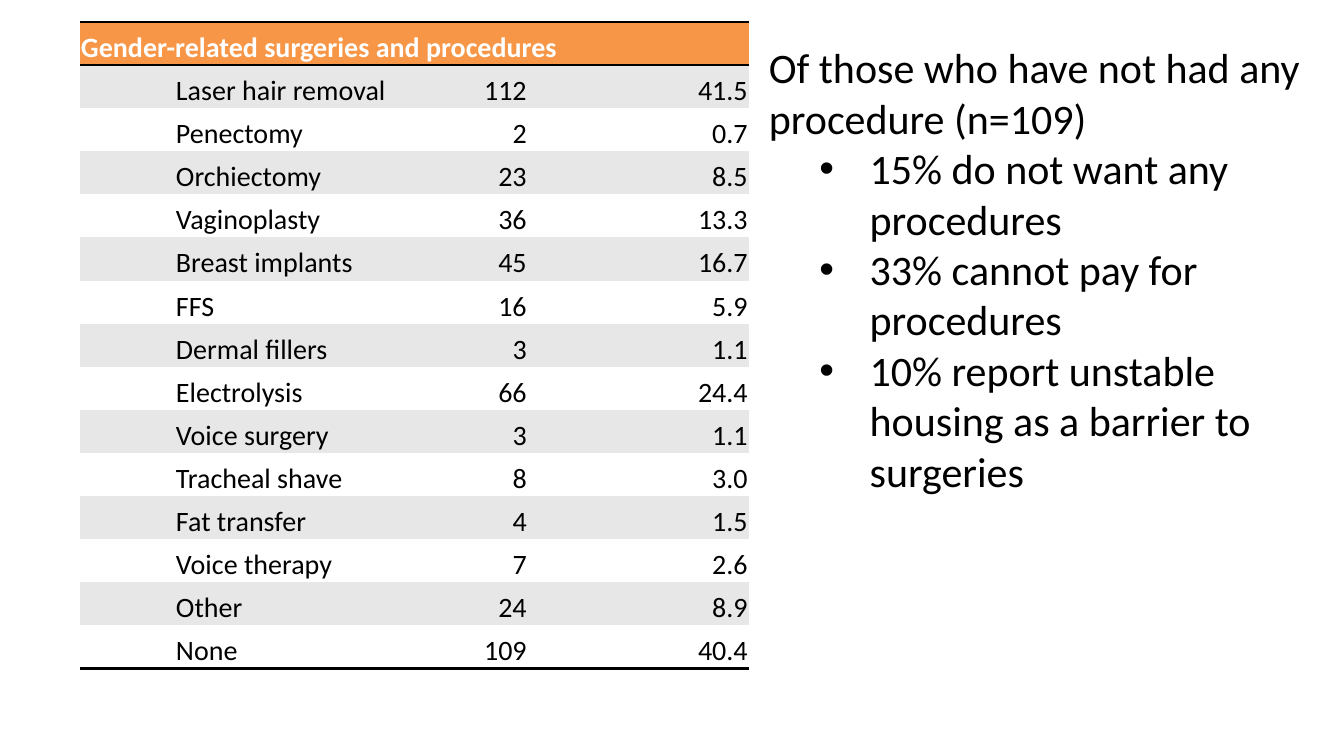
import pptx
import pptx.dml.color
import pptx.enum.text
import pptx.oxml
import pptx.oxml.ns
import pptx.util

PIXEL = 914400 / 100.8
BLACK = pptx.dml.color.RGBColor(0x00, 0x00, 0x00)
WHITE = pptx.dml.color.RGBColor(0xFF, 0xFF, 0xFF)
GREY = pptx.dml.color.RGBColor(0xE7, 0xE7, 0xE7)
ORANGE = pptx.dml.color.RGBColor(0xF7, 0x96, 0x46)
LEFT = pptx.enum.text.PP_ALIGN.LEFT
RIGHT = pptx.enum.text.PP_ALIGN.RIGHT
PLAIN_TABLE_STYLE = "{2D5ABB26-0587-4C30-8999-92F81FD0307C}"

COLUMN_WIDTHS = [95, 79, 5, 4, 5, 82, 33, 12, 61, 17, 53, 221]
COUNT_COLUMN, PERCENT_COLUMN = 10, 11
HEADING = "Gender-related surgeries and procedures"
PROCEDURES = [
    ("Laser hair removal", "112", "41.5", [9]),
    ("Penectomy", "2", "0.7", [8, 1]),
    ("Orchiectomy", "23", "8.5", [9]),
    ("Vaginoplasty", "36", "13.3", [5, 4]),
    ("Breast implants", "45", "16.7", [9]),
    ("FFS", "16", "5.9", [1, 1, 7]),
    ("Dermal fillers", "3", "1.1", [9]),
    ("Electrolysis", "66", "24.4", [6, 3]),
    ("Voice surgery", "3", "1.1", [9]),
    ("Tracheal shave", "8", "3.0", [9]),
    ("Fat transfer", "4", "1.5", [7, 2]),
    ("Voice therapy", "7", "2.6", [9]),
    ("Other", "24", "8.9", [3, 1, 5]),
    ("None", "109", "40.4", [3, 1, 5]),
]
INTRODUCTION = "Of those who have not had any procedure (n=109)"
BARRIERS = [
    "15% do not want any procedures",
    "33% cannot pay for procedures",
    "10% report unstable housing as a barrier to surgeries",
]


def px(length):
    return pptx.util.Emu(round(length * PIXEL))


class SlideBuilder:
    """Holds the text style and the current slide, and adds elements to it."""

    def __init__(self, slide, font_name):
        self.slide = slide
        self.font_name = font_name

    def style(self, paragraph, size, color, bold=False):
        font = paragraph.font
        font.name = self.font_name
        font.size = pptx.util.Pt(size)
        font.bold = bold
        font.color.rgb = color

    def add_table(self, left, top, column_widths, row_count, height):
        frame = self.slide.shapes.add_table(
            row_count, len(column_widths), px(left), px(top),
            px(sum(column_widths)), px(height))
        table = frame.table
        table.first_row = table.horz_banding = False
        properties = table._tbl.tblPr
        properties.find(pptx.oxml.ns.qn("a:tableStyleId")).text = PLAIN_TABLE_STYLE
        for column, width in zip(table.columns, column_widths):
            column.width = px(width)
        for row in table.rows:
            row.height = px(height / row_count)
        return table

    def format_row(self, row, fill, borders=()):
        for cell in row.cells:
            cell.margin_left = cell.margin_right = cell.margin_top = px(1)
            cell.margin_bottom = 0
            cell.vertical_anchor = pptx.enum.text.MSO_ANCHOR.BOTTOM
            properties = cell._tc.get_or_add_tcPr()
            for border in borders:
                properties.append(pptx.oxml.parse_xml(
                    f'<a:{border} {pptx.oxml.ns.nsdecls("a")} w="25400"><a:solidFill>'
                    f'<a:srgbClr val="{BLACK}"/></a:solidFill></a:{border}>'))
            cell.fill.solid()
            cell.fill.fore_color.rgb = fill

    def write_cell(self, cell, text, color=BLACK, bold=False, alignment=LEFT):
        cell.text = text
        paragraph = cell.text_frame.paragraphs[0]
        paragraph.alignment = alignment
        self.style(paragraph, 20, color, bold)

    def add_bulleted_text(self, left, top, width, height, introduction, bullets):
        box = self.slide.shapes.add_textbox(px(left), px(top), px(width), px(height))
        text_frame = box.text_frame
        text_frame.word_wrap = True
        text_frame.auto_size = pptx.enum.text.MSO_AUTO_SIZE.SHAPE_TO_FIT_TEXT
        paragraph = text_frame.paragraphs[0]
        paragraph.text = introduction
        self.style(paragraph, 30, BLACK)
        for bullet in bullets:
            paragraph = text_frame.add_paragraph()
            paragraph.text = bullet
            paragraph.level = 1
            properties = paragraph._p.get_or_add_pPr()
            properties.set("marL", str(pptx.util.Inches(1)))
            properties.set("indent", str(-pptx.util.Inches(0.5)))
            for element in ('buFont typeface="Arial"', 'buChar char="•"'):
                properties.append(pptx.oxml.parse_xml(
                    f'<a:{element} {pptx.oxml.ns.nsdecls("a")}/>'))
            self.style(paragraph, 30, BLACK)


def main():
    presentation = pptx.Presentation()
    presentation.slide_width = px(1344)
    presentation.slide_height = px(756)
    slide = presentation.slides.add_slide(presentation.slide_layouts.get_by_name("Blank"))
    builder = SlideBuilder(slide, "Calibri")

    table = builder.add_table(80, 22, COLUMN_WIDTHS, len(PROCEDURES) + 1, 647)
    builder.format_row(table.rows[0], ORANGE, ("lnT", "lnB"))
    table.cell(0, 0).merge(table.cell(0, PERCENT_COLUMN))
    builder.write_cell(table.cell(0, 0), HEADING, WHITE, bold=True)
    for row, (name, count, percent, spans) in enumerate(PROCEDURES, start=1):
        borders = ("lnB",) if row == len(PROCEDURES) else ()
        builder.format_row(table.rows[row], GREY if row % 2 else WHITE, borders)
        column = 1
        for span in spans:
            if span > 1:
                table.cell(row, column).merge(table.cell(row, column + span - 1))
            column += span
        builder.write_cell(table.cell(row, 1), name)
        builder.write_cell(table.cell(row, COUNT_COLUMN), count, alignment=RIGHT)
        builder.write_cell(table.cell(row, PERCENT_COLUMN), percent, alignment=RIGHT)

    builder.add_bulleted_text(759, 37, 586, 468, INTRODUCTION, BARRIERS)
    presentation.save("out.pptx")


if __name__ == "__main__":
    main()
